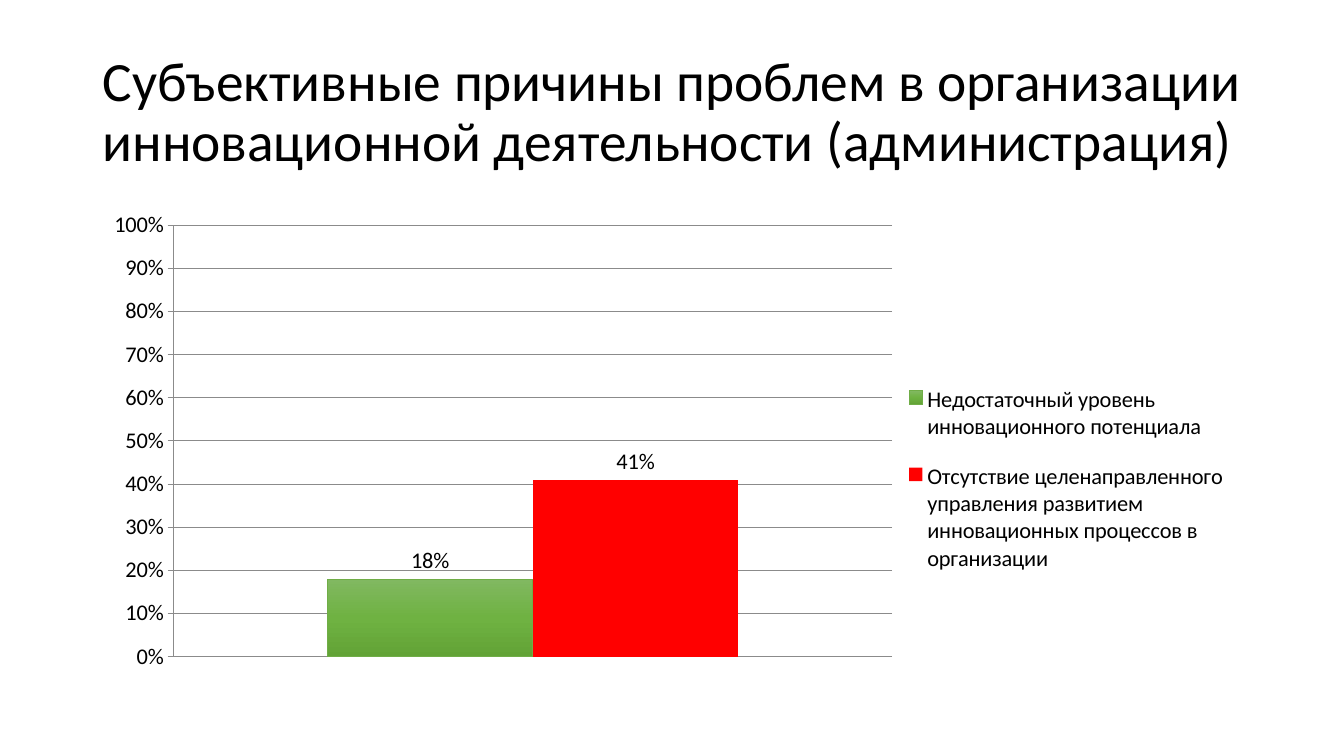
from copy import deepcopy
from lxml.etree import SubElement
from pptx import Presentation
from pptx.chart.data import CategoryChartData
from pptx.dml.color import RGBColor
from pptx.enum.chart import XL_CHART_TYPE, XL_LABEL_POSITION, XL_LEGEND_POSITION, XL_TICK_MARK
from pptx.enum.text import MSO_ANCHOR, PP_ALIGN
from pptx.oxml.ns import qn
from pptx.util import Pt


def color(code):
    return RGBColor.from_string(code)


def place(part, **spots):
    """Fix a chart part's box, given as fractions of the chart."""
    layout = part.find(qn("c:layout"))
    if layout is None:
        layout = part.makeelement(qn("c:layout"))
        part.insert(1 if part.tag == qn("c:legend") else 0, layout)
    manual = SubElement(layout, qn("c:manualLayout"))
    if part.tag == qn("c:plotArea"):
        SubElement(manual, qn("c:layoutTarget"), val="inner")
    for side in "xy":
        SubElement(manual, qn(f"c:{side}Mode"), val="edge")
    for name, value in spots.items():
        SubElement(manual, qn(f"c:{name}"), val=str(value))


deck = Presentation()
deck.slide_width, deck.slide_height = Pt(960), Pt(540)
slide = deck.slides.add_slide(deck.slide_layouts[5])

# Title
title = slide.shapes.title
box = dict(left=Pt(66), top=Pt(28.75), width=Pt(828), height=Pt(104.4))
for name, value in box.items():
    setattr(title, name, value)
frame = title.text_frame
frame.text = "Субъективные причины проблем в организации инновационной деятельности (администрация)"
frame.word_wrap = True
frame.vertical_anchor = MSO_ANCHOR.MIDDLE
para = frame.paragraphs[0]
para.alignment = PP_ALIGN.LEFT
para.line_spacing = 0.9
para.font.name, para.font.size = "Calibri", Pt(39.6)
para.font.color.rgb = color("000000")

# Chart
data = CategoryChartData(number_format="0%")
data.categories = ["1"]
data.add_series("Недостаточный уровень инновационного потенциала", [0.18])
data.add_series("Отсутствие целенаправленного управления развитием инновационных процессов в организации", [0.41])
chart = slide.shapes.add_chart(
    XL_CHART_TYPE.COLUMN_CLUSTERED, Pt(66), Pt(143.75), Pt(828), Pt(342.6), data
).chart
chart.has_title = False
chart.font.name, chart.font.size = "Calibri", Pt(16)
chart.font.color.rgb = color("000000")

# Axes
chart.category_axis.visible = False
axis = chart.value_axis
scale = dict(
    minimum_scale=0, maximum_scale=1, major_unit=0.1,
    has_major_gridlines=True, major_tick_mark=XL_TICK_MARK.OUTSIDE,
)
for name, value in scale.items():
    setattr(axis, name, value)
axis.tick_labels.number_format = "0%"
axis.tick_labels.number_format_is_linked = False
for line in (axis.format.line, axis.major_gridlines.format.line):
    line.color.rgb = color("8B8B8B")
    line.width = Pt(0.75)

# Columns
plot = chart.plots[0]
plot.gap_width, plot.overlap = 150, 0
plot.vary_by_categories = False
for bar in plot.series:
    labels = bar.data_labels
    labels.show_value = True
    labels.number_format = "0%"
    labels.number_format_is_linked = False
    labels.position = XL_LABEL_POSITION.OUTSIDE_END
green, red = plot.series
red.format.fill.solid()
red.format.fill.fore_color.rgb = color("FF0000")
fill = green.format.fill
fill.gradient()
fill.gradient_angle = 270
stops = green.format._element.spPr.find(".//" + qn("a:gsLst")) if hasattr(green.format, "_element") \
    else green._element.find(".//" + qn("a:gsLst"))
stops.insert(1, deepcopy(stops[0]))
for stop, place_at, code in zip(fill.gradient_stops, (0, 0.5, 1), ("81B861", "6FB242", "62A336")):
    stop.position = place_at
    stop.color.rgb = color(code)
green.format.line.color.rgb = color("70AD47")
green.format.line.width = Pt(0.5)

# Legend
chart.has_legend = True
legend = chart.legend
legend.position = XL_LEGEND_POSITION.RIGHT
legend.include_in_layout = False
place(legend._element, x=0.69, y=0.34, w=0.3, h=0.48)
place(plot._element.getparent(), x=0.07, y=0.05, w=0.62, h=0.9)

deck.save("out.pptx")
